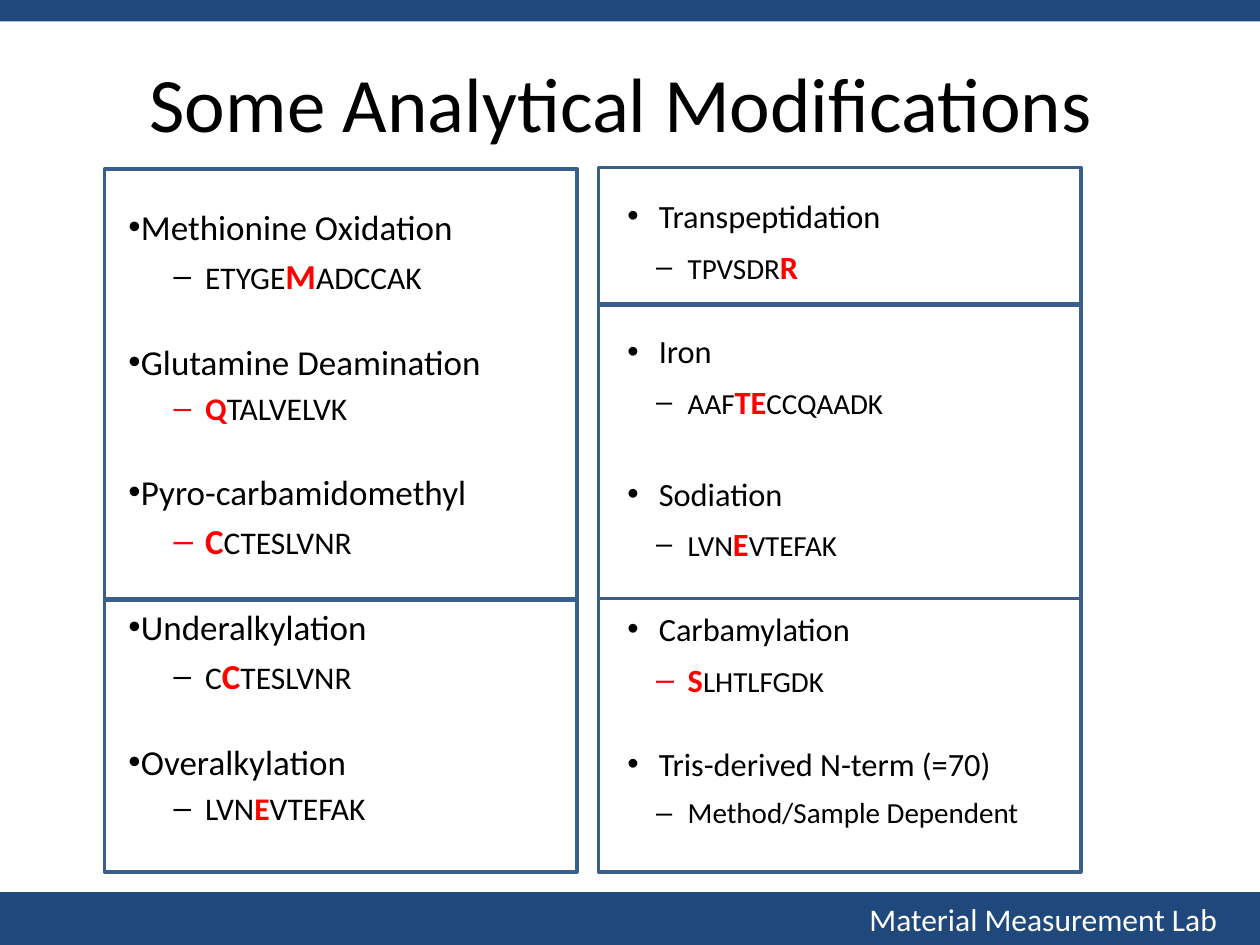
from lxml import etree
from pptx import Presentation
from pptx import util as u
from pptx.dml.color import RGBColor
from pptx.enum import shapes, text
from pptx.oxml.ns import qn

NAVY, EDGE, BLACK, RED, WHITE = "1F497D", "3A5F8C", "000000", "FF0000", "FFFFFF"

LEFT = [
    ("Methionine Oxidation", "ETYGE*M*ADCCAK", 20, 0),
    ("Glutamine Deamination", "*Q*TALVELVK", 18, 25),
    ("Pyro-carbamidomethyl", "*C*CTESLVNR", 20, 25),
    ("Underalkylation", "C*C*TESLVNR", 20, 25),
    ("Overalkylation", "LVN*E*VTEFAK", 18, 25),
]
RIGHT = [
    ("Transpeptidation", "TPVSDR*R*", 18.5, 0),
    ("Iron", "AAF*TE*CCQAADK", 18.5, 26),
    ("Sodiation", "LVN*E*VTEFAK", 18.5, 30),
    ("Carbamylation", "*S*LHTLFGDK", 18.5, 26),
    ("Tris-derived N-term (=70)", "Method/Sample Dependent", 18.5, 26),
]
FRAMES = [
    (0.83, 1.34, 3.75, 3.42),
    (0.83, 4.75, 3.75, 2.17),
    (4.75, 1.33, 3.83, 1.08),
    (4.75, 2.42, 3.83, 2.33),
    (4.75, 4.75, 3.83, 2.17),
]


def rgb(color):
    return RGBColor.from_string(color)


def add_rect(s, box, fill=None, line=None):
    sp = s.shapes.add_shape(shapes.MSO_SHAPE.RECTANGLE, *map(u.Inches, box))
    sp.shadow.inherit = False
    if fill:
        sp.fill.solid()
        sp.fill.fore_color.rgb = rgb(fill)
    else:
        sp.fill.background()
    if line:
        sp.line.color.rgb = rgb(line)
        sp.line.width = u.Pt(2)
    else:
        sp.line.fill.background()
    return sp


def add_run(p, words, size, color=BLACK, bold=False):
    r = p.add_run()
    r.text = words
    r.font.name = "Calibri"
    r.font.size = u.Pt(size)
    r.font.bold = bold
    r.font.color.rgb = rgb(color)


def add_textbox(s, box):
    tf = s.shapes.add_textbox(*map(u.Inches, box)).text_frame
    tf.word_wrap = True
    return tf


def set_bullet(p, char, margin, before):
    pPr = p._p.get_or_add_pPr()
    pPr.set("marL", str(u.Inches(margin)))
    pPr.set("indent", str(u.Inches(-0.25)))
    etree.SubElement(pPr, qn("a:buFont")).set("typeface", "Arial")
    etree.SubElement(pPr, qn("a:buChar")).set("char", char)
    p.space_before = u.Pt(before)


def add_list(s, box, entries, head_size, seq_size, head_margin, seq_before):
    tf = add_textbox(s, box)
    for i, (name, sequence, mark_size, before) in enumerate(entries):
        p = tf.add_paragraph() if i else tf.paragraphs[0]
        set_bullet(p, "•", head_margin, before)
        add_run(p, name, head_size)
        p = tf.add_paragraph()
        p.level = 1
        set_bullet(p, "–", 0.61, seq_before)
        for j, part in enumerate(sequence.split("*")):
            if part and j % 2:
                add_run(p, part, mark_size, RED, True)
            elif part:
                add_run(p, part, seq_size)


def add_title(s, words):
    tf = add_textbox(s, (0.5, 0.18, 9, 1.25))
    tf.vertical_anchor = text.MSO_ANCHOR.MIDDLE
    p = tf.paragraphs[0]
    p.alignment = text.PP_ALIGN.CENTER
    add_run(p, words, 44)


def add_footer(s, words):
    tf = add_rect(s, (0, 7.08, 10, 0.42), fill=NAVY).text_frame
    tf.margin_right = u.Inches(0.34)
    tf.vertical_anchor = text.MSO_ANCHOR.MIDDLE
    p = tf.paragraphs[0]
    p.alignment = text.PP_ALIGN.RIGHT
    add_run(p, words, 18, WHITE)


def main():
    prs = Presentation()
    prs.slide_width, prs.slide_height = u.Inches(10), u.Inches(7.5)
    s = prs.slides.add_slide(prs.slide_layouts[6])
    add_rect(s, (0, 0, 10, 0.17), fill=NAVY)
    add_footer(s, "Material Measurement Lab")
    add_title(s, "Some Analytical Modifications ")
    add_list(s, (0.92, 1.58, 4.17, 5.33), LEFT, 20, 18, 0.1, 4)
    add_list(s, (4.75, 1.51, 3.75, 5.33), RIGHT, 18.5, 16.6, 0.38, 6.8)
    for box in FRAMES:
        add_rect(s, box, line=EDGE)
    prs.save("out.pptx")


if __name__ == "__main__":
    main()
